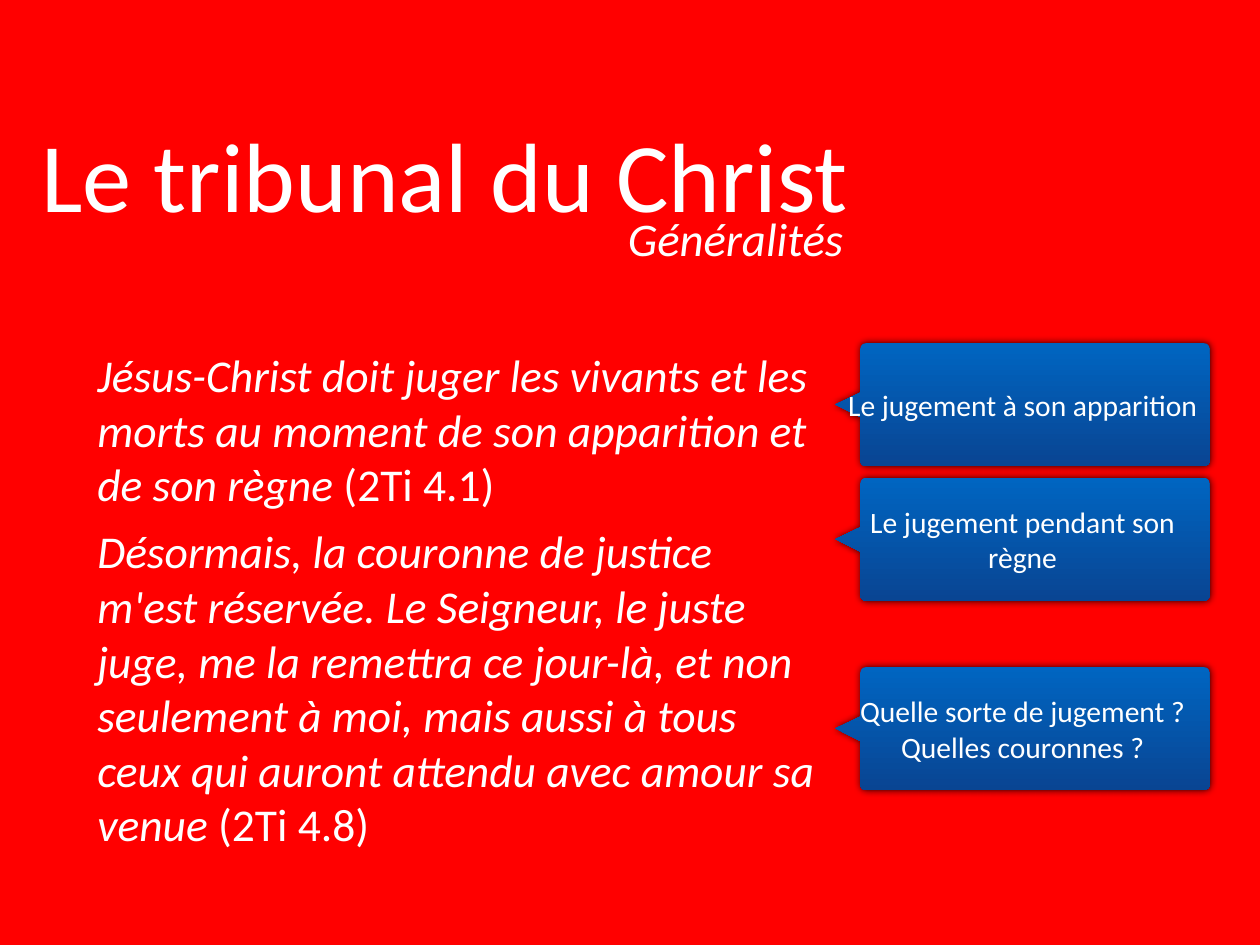
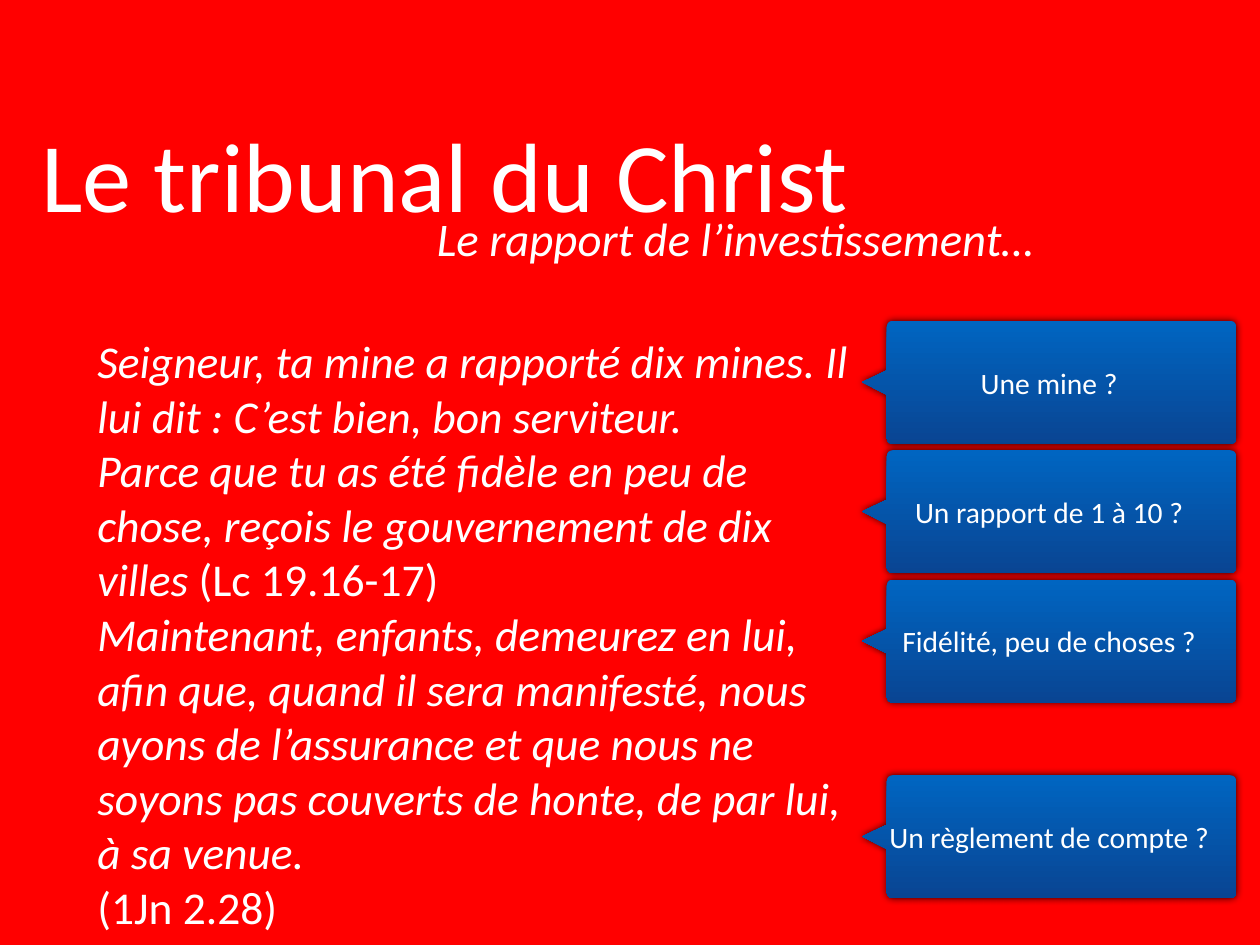
from math import cos, radians, sin

from lxml import etree
from pptx import Presentation
from pptx.dml.color import RGBColor
from pptx.enum.text import MSO_ANCHOR, MSO_AUTO_SIZE, PP_ALIGN
from pptx.oxml import parse_xml
from pptx.oxml.ns import qn
from pptx.util import Cm, Pt

RED = RGBColor(0xFF, 0x00, 0x00)
WHITE = RGBColor(0xFF, 0xFF, 0xFF)
BLUE_TOP = RGBColor(0x00, 0x65, 0xC1)
BLUE_BOTTOM = RGBColor(0x09, 0x45, 0x93)
FONT = "Calibri"
TITLE = "Le tribunal du Christ"

# Callout outline, in hundredths of a centimetre
UNIT = Cm(0.01)
WIDTH, HEIGHT, RADIUS = 1073, 353, 18
POINTER, HALF_POINTER = 71, 35

GLOW = (
    '<a:outerShdw xmlns:a="http://schemas.openxmlformats.org/drawingml/2006/main"'
    ' blurRad="76200" dist="0" dir="18900000" algn="ctr" rotWithShape="0">'
    '<a:srgbClr val="000000"><a:alpha val="80000"/></a:srgbClr></a:outerShdw>'
)

# Per slide: subtitle, body box size, space between paragraphs, body paragraphs
# as (text, italic) runs, callout left, callouts as (top, text)
SLIDES = [
    (
        "Généralités", (20.88, 15.52), 10,
        [
            [("Jésus-Christ doit juger les vivants et les morts au moment de son "
              "apparition et de son règne", True), (" (2Ti 4.1)", False)],
            [("Désormais, la couronne de justice m'est réservée. Le Seigneur, le "
              "juste juge, me la remettra ce jour-là, et non seulement à moi, mais "
              "aussi à tous ceux qui auront attendu avec amour sa venue", True),
             (" (2Ti 4.8)", False)],
        ],
        23.95,
        [(9.84, "Le jugement à son apparition"),
         (13.7, "Le jugement pendant son règne"),
         (19.13, "Quelle sorte de jugement ? Quelles couronnes ?")],
    ),
    (
        "Le rapport de l’investissement…", (22.33, 17.48), 0,
        [
            [("Seigneur, ta mine a rapporté dix mines. Il lui dit : C’est bien, "
              "bon serviteur.", True)],
            [("Parce que tu as été fidèle en peu de chose, reçois le gouvernement "
              "de dix villes", True), (" (Lc 19.16-17)", False)],
            [("Maintenant, enfants, demeurez en lui, afin que, quand il sera "
              "manifesté, nous ayons de l’assurance et que nous ne soyons pas "
              "couverts de honte, de par lui, à sa venue.", True)],
            [("(1Jn 2.28)", False)],
        ],
        24.71,
        [(9.2, "Une mine ?"),
         (12.91, "Un rapport de 1 à 10 ?"),
         (16.62, "Fidélité, peu de choses ?"),
         (22.23, "Un règlement de compte ?")],
    ),
]


def write(sp, paragraphs, size, align):
    """Fill the shape with paragraphs of (text, italic) runs, centred vertically."""
    tf = sp.text_frame
    tf.word_wrap = True
    tf.auto_size = MSO_AUTO_SIZE.NONE
    tf.vertical_anchor = MSO_ANCHOR.MIDDLE
    tf.margin_left = tf.margin_right = tf.margin_top = tf.margin_bottom = Cm(0.15)
    for i, runs in enumerate(paragraphs):
        p = tf.paragraphs[0] if i == 0 else tf.add_paragraph()
        p.alignment = align
        p.space_before = Pt(0)
        for text, italic in runs:
            r = p.add_run()
            r.text = text
            r.font.name = FONT
            r.font.size = Pt(size)
            r.font.italic = italic
            r.font.color.rgb = WHITE
    return tf.paragraphs


def place(sp, left, top, width, height):
    sp.left, sp.top, sp.width, sp.height = Cm(left), Cm(top), Cm(width), Cm(height)


# Pointer tip first, then clockwise round the rounded corners
outline = [(0, HEIGHT / 2), (POINTER, HEIGHT / 2 - HALF_POINTER)]
corners = [
    (POINTER + RADIUS, RADIUS, 180),
    (WIDTH - RADIUS, RADIUS, 270),
    (WIDTH - RADIUS, HEIGHT - RADIUS, 0),
    (POINTER + RADIUS, HEIGHT - RADIUS, 90),
]
for cx, cy, start in corners:
    for angle in range(start, start + 91, 15):
        outline.append((cx + RADIUS * cos(radians(angle)),
                        cy + RADIUS * sin(radians(angle))))
outline.append((POINTER, HEIGHT / 2 + HALF_POINTER))

prs = Presentation()
prs.slide_width, prs.slide_height = Cm(36.12), Cm(27.1)
background = prs.slide_master.background.fill
background.solid()
background.fore_color.rgb = RED

for subtitle, body_size, gap, paragraphs, callout_left, callouts in SLIDES:
    s = prs.slides.add_slide(prs.slide_layouts[1])

    title = s.shapes.title
    place(title, 0.53, 2.01, 24.46, 5.89)
    write(title, [[(TITLE, False)]], 80, PP_ALIGN.CENTER)

    body = s.placeholders[1]
    place(body, 2.64, 9.42, *body_size)
    for i, p in enumerate(write(body, paragraphs, 37, PP_ALIGN.LEFT)):
        pPr = p._p.get_or_add_pPr()
        pPr.set("marL", "0")
        pPr.set("indent", "0")
        etree.SubElement(pPr, qn("a:buNone"))
        if i:
            p.space_before = Pt(gap)

    box = s.shapes.add_textbox(Cm(11.88), Cm(6.38), Cm(18.42), Cm(1.45))
    write(box, [[(subtitle, True)]], 38, PP_ALIGN.CENTER)[0].line_spacing = Pt(30)

    for top, text in callouts:
        builder = s.shapes.build_freeform(*outline[0], scale=UNIT)
        builder.add_line_segments(outline[1:], close=True)
        callout = builder.convert_to_shape(Cm(callout_left), Cm(top))
        callout.fill.gradient()
        callout.fill.gradient_angle = 270
        for stop, color in zip(callout.fill.gradient_stops, (BLUE_TOP, BLUE_BOTTOM)):
            stop.color.rgb = color
        callout.line.fill.background()
        callout.shadow.inherit = False
        callout._element.spPr.find(qn("a:effectLst")).append(parse_xml(GLOW))
        write(callout, [[(text, False)]], 24, PP_ALIGN.CENTER)

prs.save("out.pptx")
